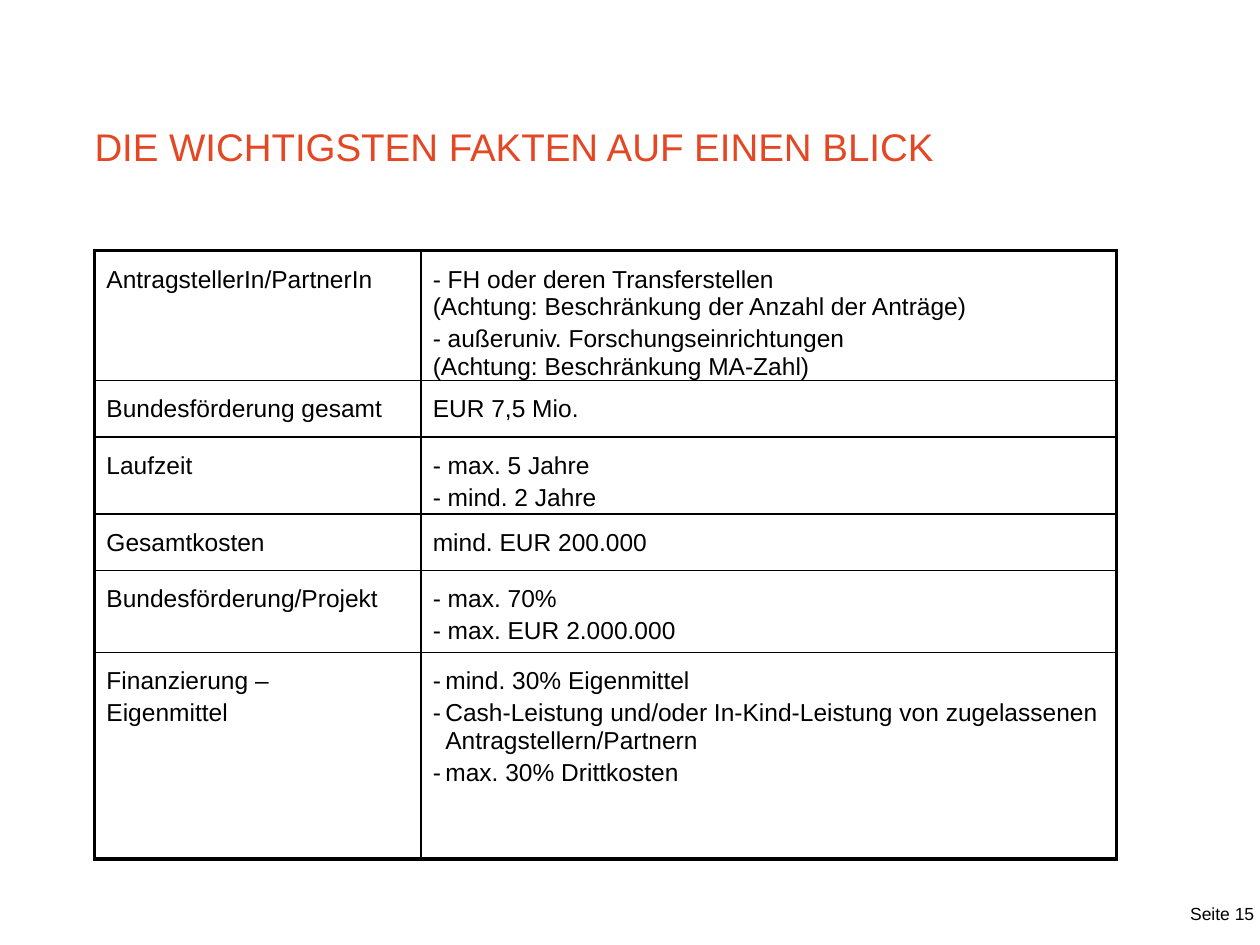
import pptx
import pptx.util
import pptx.dml.color
import pptx.enum.text
import pptx.oxml.ns
import lxml.etree

Pt = pptx.util.Pt
RED = pptx.dml.color.RGBColor(0xE3, 0x47, 0x23)
BLACK = pptx.dml.color.RGBColor(0, 0, 0)
ALIGN = pptx.enum.text.PP_ALIGN
ANCHOR = pptx.enum.text.MSO_ANCHOR
FONT = "Arial"
UNIT = pptx.util.Inches(10) // 100

COLS = [25.9, 55.2]
ROWS = [10.2, 4.5, 6.1, 4.5, 6.5, 16.4]
FACTS = [
    (["AntragstellerIn/PartnerIn"], "dash",
     [" FH oder deren Transferstellen\n(Achtung: Beschränkung der Anzahl der Anträge)",
      " außeruniv. Forschungseinrichtungen\n(Achtung: Beschränkung MA-Zahl)"]),
    (["Bundesförderung gesamt"], "plain", ["EUR 7,5 Mio."]),
    (["Laufzeit"], "dash", [" max. 5 Jahre", " mind. 2 Jahre"]),
    (["Gesamtkosten"], "plain", ["mind. EUR 200.000"]),
    (["Bundesförderung/Projekt"], "dash", [" max. 70%", " max. EUR 2.000.000"]),
    (["Finanzierung –", "Eigenmittel"], "hang",
     ["mind. 30% Eigenmittel",
      "Cash-Leistung und/oder In-Kind-Leistung von zugelassenen Antragstellern/Partnern",
      "max. 30% Drittkosten"]),
]


def grid(*spans):
    return [round(span * UNIT) for span in spans]


def tag(parent, name, **attrs):
    return lxml.etree.SubElement(parent, pptx.oxml.ns.qn("a:" + name), attrs)


def write(para, text, size, color):
    for pos, line in enumerate(text.split("\n")):
        if pos:
            para.add_line_break()
        run = para.add_run()
        run.text = line
        run.font.name = FONT
        run.font.size = Pt(size)
        run.font.color.rgb = color


def clear(frame, anchor):
    frame.margin_left = frame.margin_right = 0
    frame.margin_top = frame.margin_bottom = 0
    frame.word_wrap = True
    frame.auto_size = pptx.enum.text.MSO_AUTO_SIZE.NONE
    frame.vertical_anchor = anchor


def head(slide, box, text):
    title = slide.shapes.title
    title.left, title.top, title.width, title.height = grid(*box)
    clear(title.text_frame, ANCHOR.BOTTOM)
    para = title.text_frame.paragraphs[0]
    para.alignment = ALIGN.LEFT
    para.line_spacing = Pt(24)
    write(para, text, 22, RED)


def foot(slide, box, text):
    frame = slide.shapes.add_textbox(*grid(*box)).text_frame
    clear(frame, ANCHOR.MIDDLE)
    para = frame.paragraphs[0]
    para.alignment = ALIGN.CENTER
    write(para, text, 10, BLACK)


def edge(cell, row, col):
    props = cell._tc.get_or_add_tcPr()
    outer = {"L": col == 0, "R": col == len(COLS) - 1,
             "T": row == 0, "B": row == len(ROWS) - 1}
    for side, thick in outer.items():
        line = tag(props, "ln" + side, w=str(Pt(2.25 if thick else 1)))
        tag(tag(line, "solidFill"), "srgbClr", val=str(BLACK))


def fill(cell, mode, items):
    cell.fill.background()
    cell.margin_left, cell.margin_top = grid(0.95, 1.2)
    cell.margin_right = cell.margin_bottom = 0
    frame = cell.text_frame
    for pos, text in enumerate(items):
        para = frame.add_paragraph() if pos else frame.paragraphs[0]
        if mode != "plain":
            props = para._p.get_or_add_pPr()
            inset = grid(1 if mode == "hang" else 0)[0]
            props.set("marL", str(inset))
            props.set("indent", str(-inset))
            tag(props, "buFont", typeface=FONT)
            tag(props, "buChar", char="-")
        if pos:
            para.space_before = Pt(2.5)
        write(para, text, 14, BLACK)


def facts(slide, left, top):
    box = grid(left, top, sum(COLS), sum(ROWS))
    table = slide.shapes.add_table(len(ROWS), len(COLS), *box).table
    table.first_row = table.horz_banding = False
    for col, width in zip(table.columns, grid(*COLS)):
        col.width = width
    for row, height in zip(table.rows, grid(*ROWS)):
        row.height = height
    for row, (label, mode, items) in enumerate(FACTS):
        for col, part in enumerate([("plain", label), (mode, items)]):
            cell = table.cell(row, col)
            edge(cell, row, col)
            fill(cell, *part)


def main():
    deck = pptx.Presentation()
    deck.slide_width, deck.slide_height = grid(100, 75)
    slide = deck.slides.add_slide(deck.slide_layouts[5])
    head(slide, (7.5, 7.6, 87.4, 5.8), "DIE WICHTIGSTEN FAKTEN AUF EINEN BLICK")
    facts(slide, 7.5, 19.9)
    foot(slide, (94, 70.5, 6, 4), "Seite 15")
    deck.save("out.pptx")


if __name__ == "__main__":
    main()
